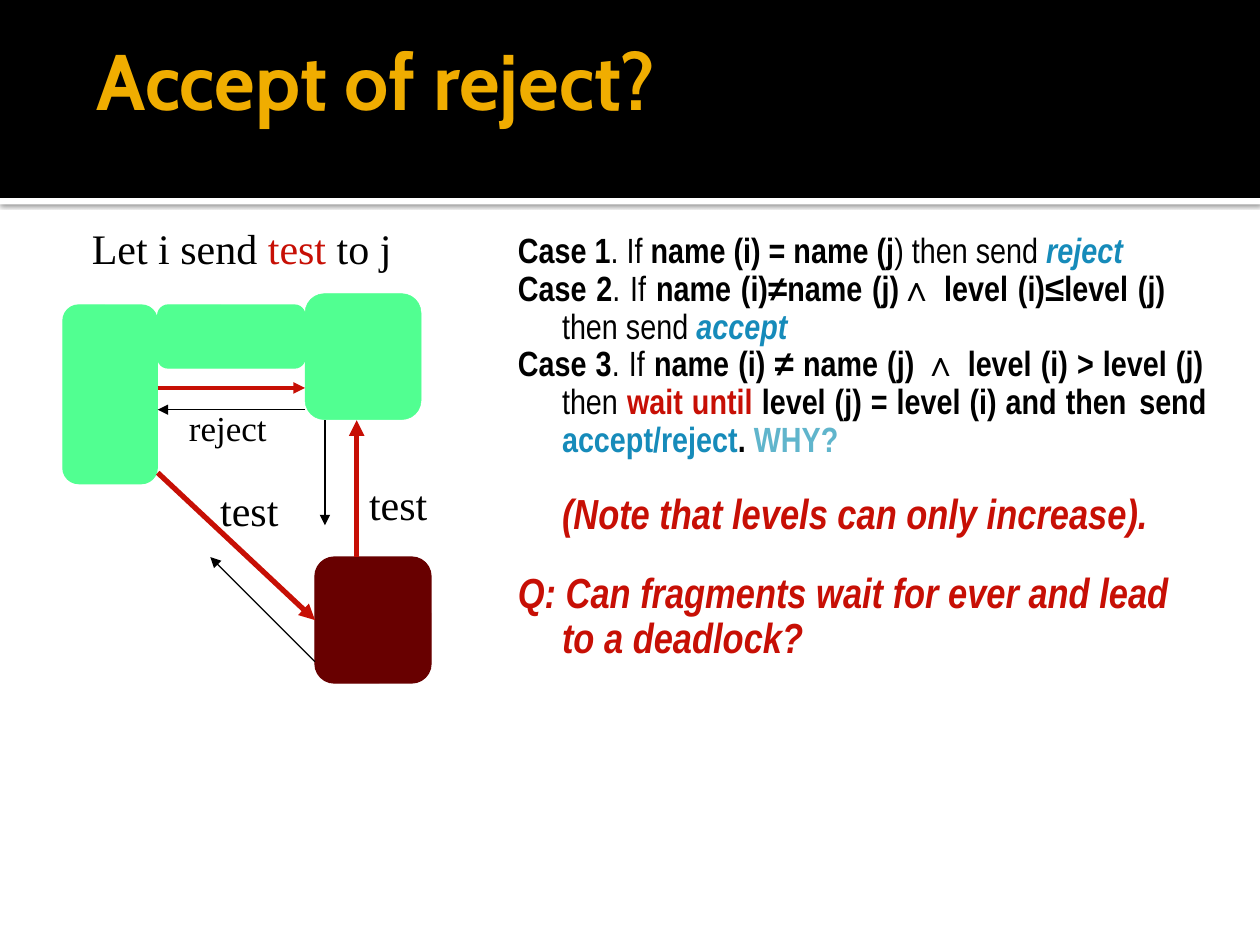
from dataclasses import dataclass
from typing import NamedTuple

from lxml import etree
from pptx import Presentation
from pptx.dml.color import RGBColor
from pptx.enum.shapes import MSO_CONNECTOR, MSO_SHAPE
from pptx.enum.text import MSO_ANCHOR, MSO_AUTO_SIZE, PP_ALIGN
from pptx.oxml.ns import qn
from pptx.util import Cm, Pt

RECTANGLE = MSO_SHAPE.RECTANGLE
ROUNDED = MSO_SHAPE.ROUNDED_RECTANGLE
STRAIGHT = MSO_CONNECTOR.STRAIGHT
TOP, MIDDLE = MSO_ANCHOR.TOP, MSO_ANCHOR.MIDDLE
FIXED, FIT = MSO_AUTO_SIZE.NONE, MSO_AUTO_SIZE.SHAPE_TO_FIT_TEXT
LEFT, JUSTIFY = PP_ALIGN.LEFT, PP_ALIGN.JUSTIFY


@dataclass(frozen=True)
class Theme:
    black: str = "000000"
    white: str = "FFFFFF"
    gold: str = "F0AD00"
    red: str = "C70F05"
    blue: str = "168BBA"
    sky: str = "60B5CC"
    green: str = "51FF91"
    maroon: str = "680000"
    title_font: str = "Cabin"
    serif: str = "Times New Roman"
    narrow: str = "Arial Narrow"
    title_size: float = 45
    large: float = 24
    normal: float = 20
    gap: float = 19


THEME = Theme()


class Box(NamedTuple):
    left: float
    top: float
    width: float
    height: float


class Block(NamedTuple):
    box: Box
    color: str
    outline: float = 0.75


class Arrow(NamedTuple):
    start: tuple[float, float]
    end: tuple[float, float]
    color: str = THEME.black
    weight: float = 0.75


class Label(NamedTuple):
    text: str
    box: Box
    size: float


class Piece(NamedTuple):
    text: str
    color: str = THEME.black
    bold: bool = True
    italic: bool = False


class Passage(NamedTuple):
    pieces: list[Piece]
    size: float = THEME.normal
    font: str = THEME.narrow
    align: PP_ALIGN = LEFT
    margin: float = 1.22
    indent: float = -0.89
    spacing: float = 0.9
    before: float = 0


SLIDE = Box(0, 0, 25.4, 19.05)
HEADER = Box(0, 0, SLIDE.width, 3.99)
STRIPE = Box(0, HEADER.height, SLIDE.width, 0.13)

LEFT_EDGE, RIGHT_EDGE = 3.18, 6.15
BLOCKS = [
    Block(Box(1.27, 6.15, 1.9, 3.6), THEME.green),
    Block(Box(6.35, 11.23, 2.34, 2.54), THEME.maroon),
    Block(Box(RIGHT_EDGE, 5.92, 2.34, 2.54), THEME.green, 0.25),
    Block(Box(LEFT_EDGE, 6.15, RIGHT_EDGE - LEFT_EDGE, 1.27), THEME.green),
]
ARROWS = [
    Arrow((LEFT_EDGE, 9.53), (6.35, 12.5), THEME.red, 3),
    Arrow((LEFT_EDGE, 7.82), (RIGHT_EDGE, 7.82), THEME.red, 2.25),
    Arrow((7.19, 11.23), (7.19, 8.47), THEME.red, 3),
    Arrow((6.35, 13.34), (4.24, 11.23)),
    Arrow((6.55, 8.47), (6.55, 10.59)),
    Arrow((RIGHT_EDGE, 8.26), (LEFT_EDGE, 8.26)),
]
LABELS = [
    Label("test", Box(4.19, 9.65, 1.68, 1.27), THEME.large),
    Label("reject", Box(3.56, 8.08, 2.08, 1.09), THEME.normal),
    Label("test", Box(7.19, 9.53, 1.68, 1.27), THEME.large),
]
TITLE = [Passage([Piece("Accept of reject?", THEME.gold)], THEME.title_size,
                 THEME.title_font, margin=0, indent=0, spacing=1)]
INTRO = [Passage([Piece("Let i send ", bold=False),
                  Piece("test", THEME.red, False),
                  Piece(" to j", bold=False)],
                 THEME.large, THEME.serif, spacing=1)]
CASES = [
    Passage([Piece("Case 1"), Piece(". If ", bold=False),
             Piece("name (i) = name (j"), Piece(") then send ", bold=False),
             Piece("reject", THEME.blue, italic=True)], align=JUSTIFY),
    Passage([Piece("Case 2"), Piece(". If ", bold=False),
             Piece("name (i)≠name (j)∧ level (i)≤level (j)"),
             Piece(" \tthen send ", bold=False),
             Piece("accept", THEME.blue, italic=True)], align=JUSTIFY),
    Passage([Piece("Case 3"), Piece(". If ", bold=False),
             Piece("name (i) ≠ name (j) ∧ level (i) > level (j)"),
             Piece(" \tthen ", bold=False), Piece("wait until ", THEME.red),
             Piece("level (j) = level (i) and then \tsend "),
             Piece("accept/reject", THEME.blue), Piece(". "),
             Piece("WHY?", THEME.sky)], align=JUSTIFY),
    Passage([Piece("(Note that levels can only increase).", THEME.red, italic=True)],
            THEME.large, indent=0, before=THEME.gap),
    Passage([Piece("Q: Can fragments wait for ever and lead to a deadlock?",
                   THEME.red, italic=True)], THEME.large, before=THEME.gap),
]


def lengths(box: Box) -> list[Cm]:
    return [Cm(value) for value in box]


def write(frame, passages: list[Passage]) -> None:
    for number, passage in enumerate(passages):
        paragraph = frame.paragraphs[0] if number == 0 else frame.add_paragraph()
        paragraph.alignment = passage.align
        paragraph.line_spacing = passage.spacing
        paragraph.space_before = Pt(passage.before)
        paragraph.space_after = Pt(0)
        properties = paragraph._p.get_or_add_pPr()
        properties.set("marL", str(Cm(passage.margin)))
        properties.set("indent", str(Cm(passage.indent)))
        etree.SubElement(properties, qn("a:buNone"))
        for piece in passage.pieces:
            run = paragraph.add_run()
            run.text = piece.text
            run.font.name = passage.font
            run.font.size = Pt(passage.size)
            run.font.bold = piece.bold
            run.font.italic = piece.italic
            run.font.color.rgb = RGBColor.from_string(piece.color)


def fill_placeholder(shape, box: Box, insets: Box, passages: list[Passage],
                     anchor: MSO_ANCHOR = TOP) -> None:
    shape.left, shape.top, shape.width, shape.height = lengths(box)
    frame = shape.text_frame
    frame.auto_size, frame.word_wrap = FIXED, True
    frame.vertical_anchor = anchor
    (frame.margin_left, frame.margin_top,
     frame.margin_right, frame.margin_bottom) = lengths(insets)
    write(frame, passages)


def add_block(slide, block: Block, kind: MSO_SHAPE = ROUNDED):
    shape = slide.shapes.add_shape(kind, *lengths(block.box))
    shape.shadow.inherit = False
    color = RGBColor.from_string(block.color)
    shape.fill.solid()
    shape.fill.fore_color.rgb = color
    if block.outline:
        shape.line.color.rgb = color
        shape.line.width = Pt(block.outline)
    else:
        shape.line.fill.background()
    return shape


def add_band(slide, box: Box, color: str):
    shape = add_block(slide, Block(box, color, 0), RECTANGLE)
    slide.shapes._spTree.insert(2, shape._element)
    return shape


def add_soft_shadow(shape) -> None:
    effects = shape._element.spPr.find(qn("a:effectLst"))
    shadow = etree.SubElement(effects, qn("a:outerShdw"), blurRad=str(Pt(2.5)),
                              dist=str(Pt(0.8)), dir="5400000", rotWithShape="0")
    color = etree.SubElement(shadow, qn("a:srgbClr"), val=THEME.black)
    etree.SubElement(color, qn("a:alpha"), val="60000")


def add_arrow(slide, arrow: Arrow) -> None:
    points = [Cm(value) for value in arrow.start + arrow.end]
    connector = slide.shapes.add_connector(STRAIGHT, *points)
    connector.line.color.rgb = RGBColor.from_string(arrow.color)
    connector.line.width = Pt(arrow.weight)
    etree.SubElement(connector.line._get_or_add_ln(), qn("a:tailEnd"), type="triangle")
    etree.SubElement(connector._element.spPr, qn("a:effectLst"))


def add_label(slide, label: Label) -> None:
    frame = slide.shapes.add_textbox(*lengths(label.box)).text_frame
    frame.word_wrap, frame.auto_size = False, FIT
    write(frame, [Passage([Piece(label.text, bold=False)], label.size, THEME.serif,
                          margin=0, indent=0, spacing=1)])


def main() -> None:
    presentation = Presentation()
    presentation.slide_width, presentation.slide_height = Cm(SLIDE.width), Cm(SLIDE.height)
    slide = presentation.slides.add_slide(presentation.slide_layouts[3])
    add_band(slide, HEADER, THEME.black)
    add_soft_shadow(add_band(slide, STRIPE, THEME.white))
    fill_placeholder(slide.shapes.title, Box(1.7, 0, 21.59, 3.18),
                     Box(0.25, 0.13, 0.13, 0.13), TITLE, MIDDLE)
    fill_placeholder(slide.placeholders[1], Box(1.27, 4.24, 8.94, 11.43),
                     Box(0.25, 0.25, 0.25, 0.13), INTRO)
    fill_placeholder(slide.placeholders[2], Box(9.96, 4.45, 14.61, 9.53),
                     Box(0.15, 0.25, 0.25, 0.13), CASES)
    for block in BLOCKS:
        add_block(slide, block)
    for arrow in ARROWS:
        add_arrow(slide, arrow)
    for label in LABELS:
        add_label(slide, label)
    presentation.save("out.pptx")


if __name__ == "__main__":
    main()
